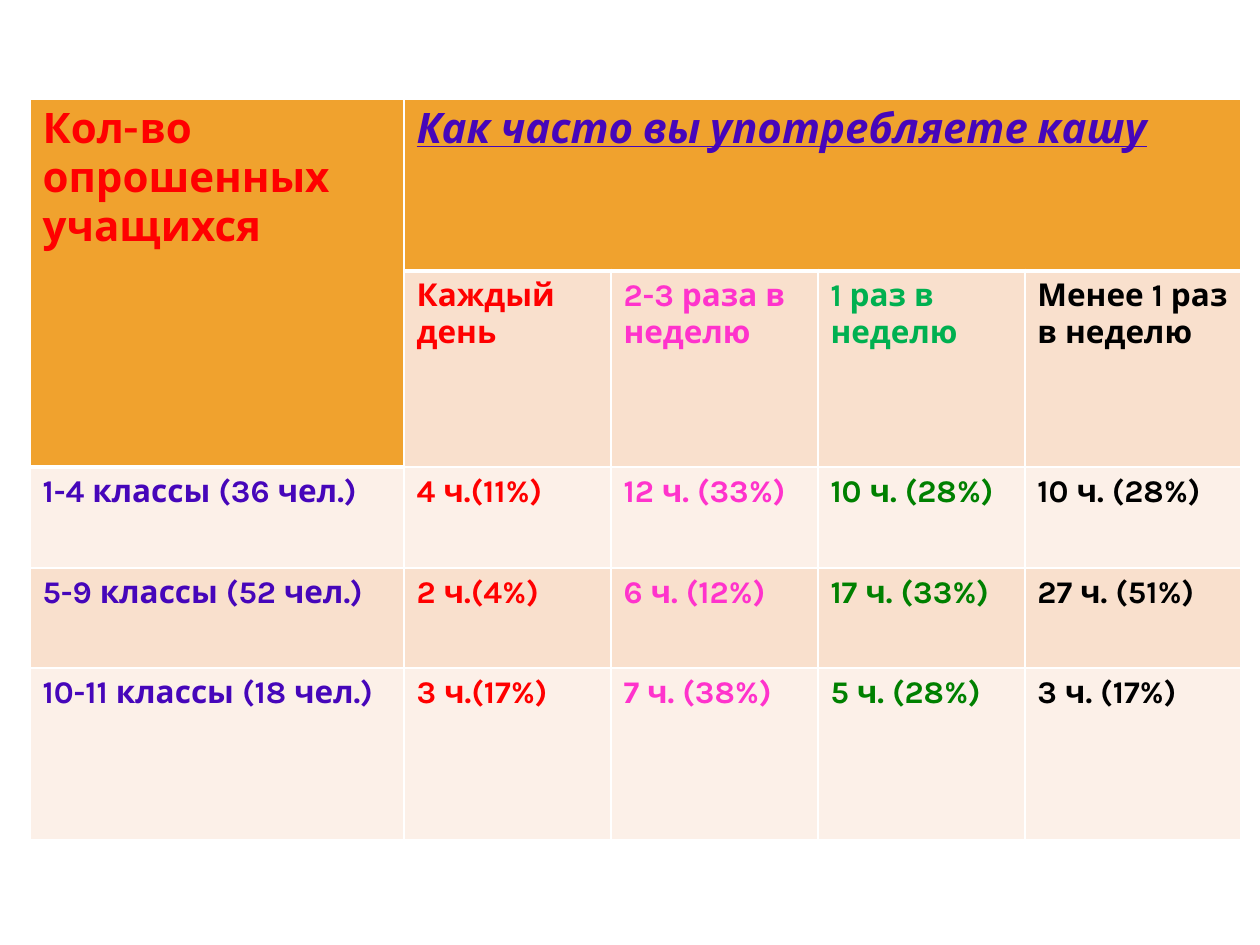
"""Build a slide with a survey table on how often pupils eat porridge."""

import dataclasses

import lxml.etree
import pptx
import pptx.dml.color
import pptx.oxml.ns
import pptx.table
import pptx.util

EMU_PER_PX = 914400 / 126


@dataclasses.dataclass(frozen=True)
class Theme:
    font: str = "Karla"
    heading_size: int = 24
    body_size: int = 18
    thin_line: int = 1
    thick_line: int = 3
    red: str = "FF0000"
    violet: str = "4606BA"
    pink: str = "FF33CC"
    light_green: str = "00B050"
    green: str = "008000"
    black: str = "000000"
    white: str = "FFFFFF"
    header_fill: str = "F0A22E"
    dark_band: str = "F9E0CD"
    light_band: str = "FCF0E8"


@dataclasses.dataclass(frozen=True)
class Answer:
    heading: str
    heading_color: str
    values: tuple[str, ...]
    value_color: str


THEME = Theme()
TABLE_LEFT, TABLE_TOP = 30, 99
COLUMN_WIDTHS = (374, 207, 207, 207, 216)
ROW_HEIGHTS = (172, 196, 101, 100, 172)
ROW_FILLS = (THEME.header_fill, THEME.dark_band, THEME.light_band, THEME.dark_band, THEME.light_band)
GROUPS = ("1-4 классы (36 чел.)", "5-9 классы (52 чел.)", "10-11 классы (18 чел.)")
ANSWERS = (
    Answer("Каждый день", THEME.red, ("4 ч.(11%)", "2 ч.(4%)", "3 ч.(17%)"), THEME.red),
    Answer("2-3 раза в неделю", THEME.pink, ("12 ч. (33%)", "6 ч. (12%)", "7 ч. (38%)"), THEME.pink),
    Answer("1 раз в неделю", THEME.light_green, ("10 ч. (28%)", "17 ч. (33%)", "5 ч. (28%)"), THEME.green),
    Answer("Менее 1 раз\nв неделю", THEME.black, ("10 ч. (28%)", "27 ч. (51%)", "3 ч. (17%)"), THEME.black),
)


def px(length: int) -> pptx.util.Emu:
    return pptx.util.Emu(round(length * EMU_PER_PX))


def write_text(cell: pptx.table._Cell, text: str, *, color: str,
               size: int = THEME.body_size, emphasis: bool = False) -> None:
    cell.text = text
    for paragraph in cell.text_frame.paragraphs:
        for run in paragraph.runs:
            font = run.font
            font.name = THEME.font
            font.size = pptx.util.Pt(size)
            font.bold = True
            font.italic = emphasis
            font.underline = emphasis
            font.color.rgb = pptx.dml.color.RGBColor.from_string(color)


def line_below(row: int, column: int) -> int:
    last_header_row = 1 if column == 0 else 0
    return THEME.thick_line if row == last_header_row else THEME.thin_line


def style_cell(cell: pptx.table._Cell, row: int, column: int) -> None:
    fill_color = THEME.header_fill if column == 0 and row < 2 else ROW_FILLS[row]
    cell.fill.solid()
    cell.fill.fore_color.rgb = pptx.dml.color.RGBColor.from_string(fill_color)
    properties = cell._tc.get_or_add_tcPr()
    edges = {"lnL": THEME.thin_line, "lnR": THEME.thin_line,
             "lnT": line_below(row - 1, column), "lnB": line_below(row, column)}
    qualified = pptx.oxml.ns.qn
    for position, (edge, width) in enumerate(edges.items()):
        line = lxml.etree.Element(qualified(f"a:{edge}"), w=str(pptx.util.Pt(width)))
        solid = lxml.etree.SubElement(line, qualified("a:solidFill"))
        lxml.etree.SubElement(solid, qualified("a:srgbClr"), val=THEME.white)
        properties.insert(position, line)


def add_survey_table(slide: pptx.slide.Slide) -> pptx.table.Table:
    shape = slide.shapes.add_table(
        len(ROW_HEIGHTS), len(COLUMN_WIDTHS), px(TABLE_LEFT), px(TABLE_TOP),
        px(sum(COLUMN_WIDTHS)), px(sum(ROW_HEIGHTS)))
    table = shape.table
    for column, width in zip(table.columns, COLUMN_WIDTHS):
        column.width = px(width)
    for row, height in zip(table.rows, ROW_HEIGHTS):
        row.height = px(height)
    for row in range(len(ROW_HEIGHTS)):
        for column in range(len(COLUMN_WIDTHS)):
            style_cell(table.cell(row, column), row, column)
    table.cell(0, 0).merge(table.cell(1, 0))
    table.cell(0, 1).merge(table.cell(0, len(ANSWERS)))
    return table


def fill_survey_table(table: pptx.table.Table) -> None:
    write_text(table.cell(0, 0), "Кол-во\nопрошенных\nучащихся",
               color=THEME.red, size=THEME.heading_size)
    write_text(table.cell(0, 1), "Как часто вы употребляете кашу",
               color=THEME.violet, size=THEME.heading_size, emphasis=True)
    for row, group in enumerate(GROUPS, start=2):
        write_text(table.cell(row, 0), group, color=THEME.violet)
    for column, answer in enumerate(ANSWERS, start=1):
        write_text(table.cell(1, column), answer.heading, color=answer.heading_color)
        for row, value in enumerate(answer.values, start=2):
            write_text(table.cell(row, column), value, color=answer.value_color)


def main() -> None:
    presentation = pptx.Presentation()
    presentation.slide_width = px(1260)
    presentation.slide_height = px(945)
    slide = presentation.slides.add_slide(presentation.slide_layouts[6])
    fill_survey_table(add_survey_table(slide))
    presentation.save("out.pptx")


if __name__ == "__main__":
    main()
